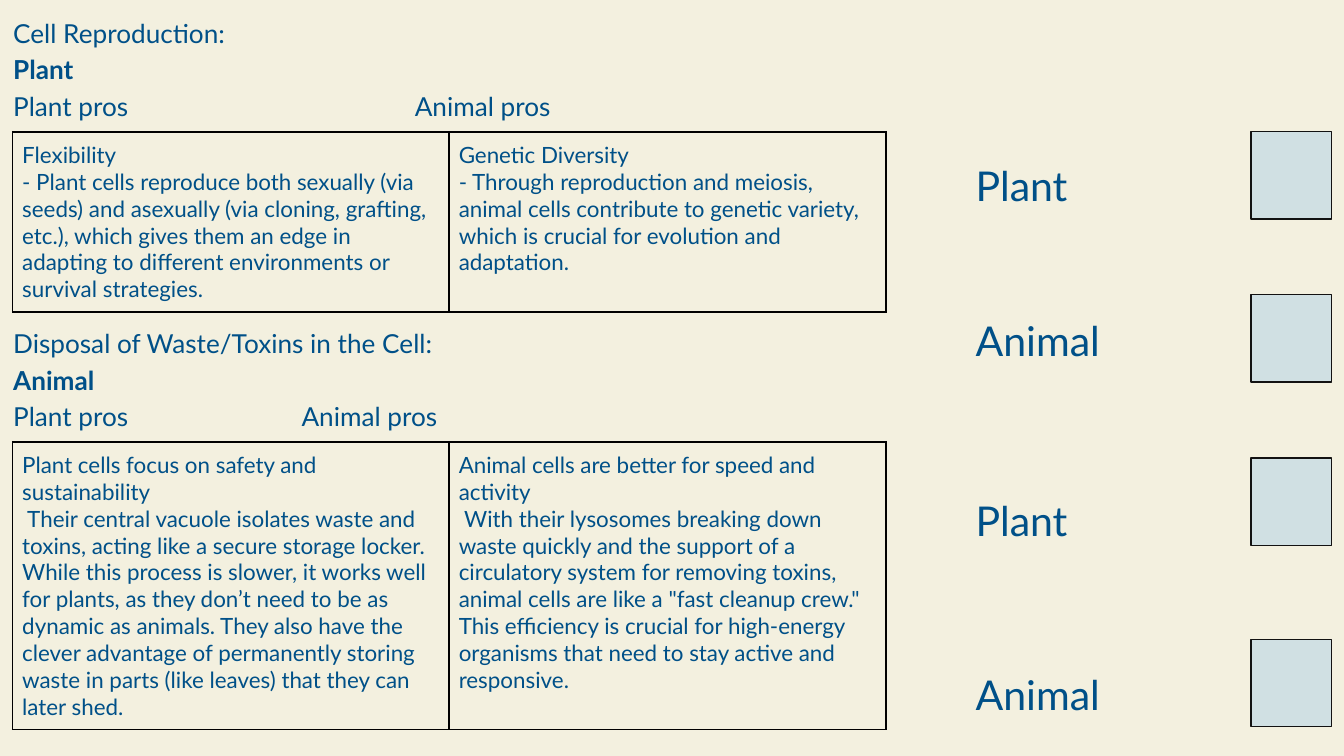
from dataclasses import dataclass

from lxml.etree import SubElement
from pptx import Presentation
from pptx.dml.color import RGBColor
from pptx.enum.shapes import MSO_SHAPE as Shape
from pptx.oxml import parse_xml
from pptx.oxml.ns import nsdecls, qn
from pptx.slide import Slide
from pptx.text.text import TextFrame
from pptx.util import Cm, Pt

COLORS = {
    "background": "F3F0DF",
    "text": "005088",
    "box": "D0E0E3",
    "box_line": "121212",
    "border": "000000",
}
FONT = "Lato"
TEXT_INSET = 0.25
CELL_INSET = 0.18


@dataclass
class Comparison:
    """A heading block with a table of plant and animal advantages (cm)."""
    topic: str
    winner: str
    top: float
    tab: float
    row_height: float
    plant: tuple[str, str]
    animal: tuple[str, str]


@dataclass
class Choice:
    """A cell type with its answer box (cm)."""
    cell_type: str
    label_top: float
    box_top: float


COMPARISONS = [
    Comparison(
        "Cell Reproduction:", "Plant", 0, 7.59, 3.38,
        ("Flexibility",
         "- Plant cells reproduce both sexually (via seeds) and asexually (via "
         "cloning, grafting, etc.), which gives them an edge in adapting to "
         "different environments or survival strategies."),
        ("Genetic Diversity",
         "- Through reproduction and meiosis, animal cells contribute to genetic "
         "variety, which is crucial for evolution and adaptation."),
    ),
    Comparison(
        "Disposal of Waste/Toxins in the Cell:", "Animal", 5.86, 5.45, 5.42,
        ("Plant cells focus on safety and sustainability",
         " Their central vacuole isolates waste and toxins, acting like a secure "
         "storage locker. While this process is slower, it works well for plants, "
         "as they don’t need to be as dynamic as animals. They also have the clever "
         "advantage of permanently storing waste in parts (like leaves) that they "
         "can later shed."),
        ("Animal cells are better for speed and activity",
         " With their lysosomes breaking down waste quickly and the support of a "
         "circulatory system for removing toxins, animal cells are like a \"fast "
         "cleanup crew.\" This efficiency is crucial for high-energy organisms that "
         "need to stay active and responsive."),
    ),
]
CHOICES = [
    Choice("Plant", 2.79, 2.49),
    Choice("Animal", 5.72, 5.57),
    Choice("Plant", 9.12, 8.66),
    Choice("Animal", 12.4, 12.09),
]


def rgb(name: str) -> RGBColor:
    return RGBColor.from_string(COLORS[name])


def format_text(frame: TextFrame, size: float) -> None:
    for paragraph in frame.paragraphs:
        for run in paragraph.runs:
            run.font.name = FONT
            run.font.size = Pt(size)
            run.font.color.rgb = rgb("text")


def add_text(slide: Slide, text: str, left: float, top: float,
             width: float, height: float, size: float) -> TextFrame:
    frame = slide.shapes.add_textbox(Cm(left), Cm(top), Cm(width), Cm(height)).text_frame
    frame.word_wrap = True
    frame.margin_left = frame.margin_right = Cm(TEXT_INSET)
    frame.margin_top = frame.margin_bottom = Cm(TEXT_INSET)
    frame.text = text
    format_text(frame, size)
    return frame


def add_heading(slide: Slide, comparison: Comparison) -> None:
    lines = [comparison.topic, comparison.winner, "Plant pros\tAnimal pros"]
    frame = add_text(slide, "\n".join(lines), 0, comparison.top, 16.5, 2.49, 14)
    for paragraph in frame.paragraphs:
        paragraph.line_spacing = 1.15
    _, winner, columns = frame.paragraphs
    winner.runs[0].font.bold = True
    tabs = SubElement(columns._p.get_or_add_pPr(), qn("a:tabLst"))
    SubElement(tabs, qn("a:tab"), pos=str(Cm(comparison.tab)), algn="l")


def add_pros_table(slide: Slide, comparison: Comparison) -> None:
    table = slide.shapes.add_table(
        1, 2, Cm(0.24), Cm(comparison.top + 2.49), Cm(16.5), Cm(comparison.row_height)
    ).table
    table.first_row = table.horz_banding = False
    for cell, pros in zip(table.rows[0].cells, (comparison.plant, comparison.animal)):
        cell.margin_left = cell.margin_right = Cm(CELL_INSET)
        cell.margin_top = cell.margin_bottom = Cm(CELL_INSET)
        cell.text_frame.text = "\n".join(pros)
        format_text(cell.text_frame, 12)
        cell.fill.background()
        properties = cell._tc.get_or_add_tcPr()
        for index, side in enumerate(("lnL", "lnR", "lnT", "lnB")):
            properties.insert(index, parse_xml(
                f'<a:{side} {nsdecls("a")} w="{Pt(1)}"><a:solidFill>'
                f'<a:srgbClr val="{COLORS["border"]}"/></a:solidFill></a:{side}>'
            ))


def add_answer_box(slide: Slide, top: float) -> None:
    box = slide.shapes.add_shape(Shape.RECTANGLE, Cm(23.64), Cm(top), Cm(1.52), Cm(1.65))
    box.shadow.inherit = False
    box.fill.solid()
    box.fill.fore_color.rgb = rgb("box")
    box.line.color.rgb = rgb("box_line")
    box.line.width = Pt(0.75)


def main() -> None:
    deck = Presentation()
    deck.slide_width, deck.slide_height = Cm(25.4), Cm(14.29)
    slide = deck.slides.add_slide(deck.slide_layouts[6])
    slide.background.fill.solid()
    slide.background.fill.fore_color.rgb = rgb("background")

    for comparison in COMPARISONS:
        add_heading(slide, comparison)
        add_pros_table(slide, comparison)
    for choice in CHOICES:
        add_answer_box(slide, choice.box_top)
        add_text(slide, choice.cell_type, 18.19, choice.label_top, 5.77, 1.35, 22)

    deck.save("out.pptx")


if __name__ == "__main__":
    main()
